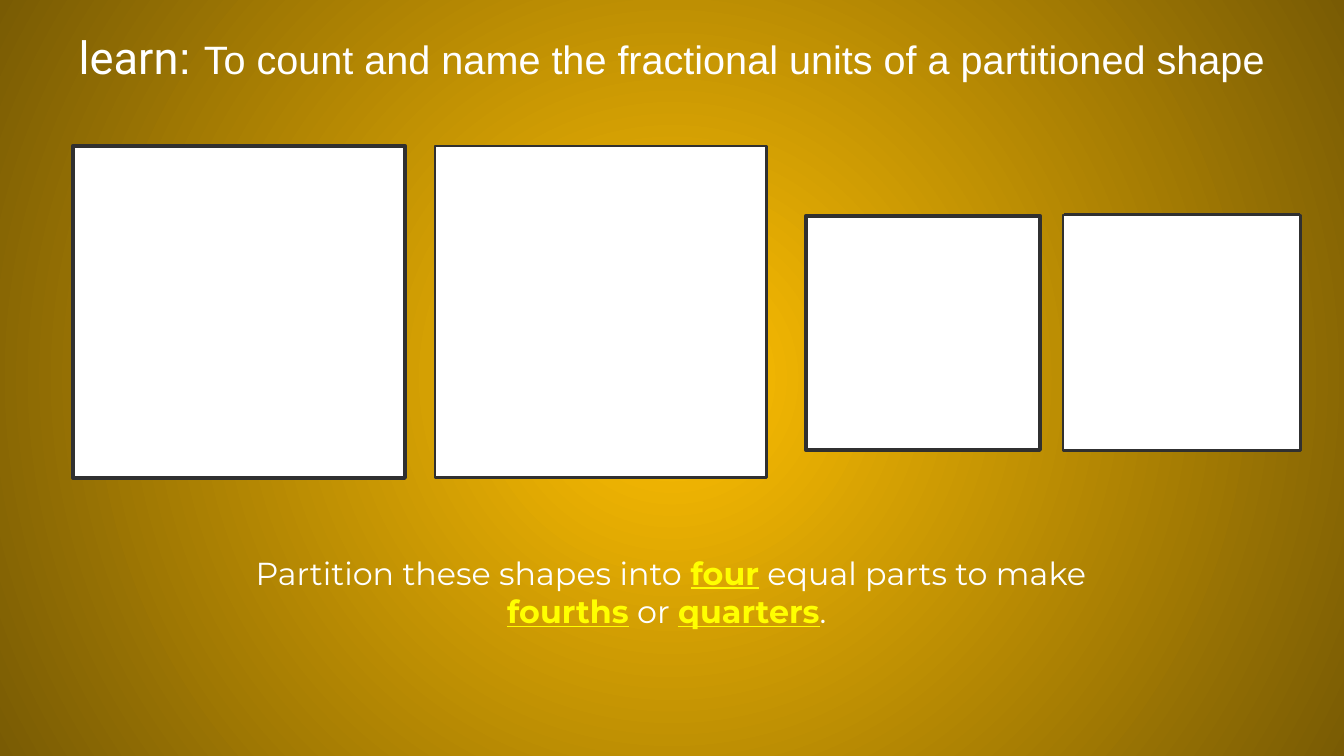
import pptx
import pptx.dml.color
import pptx.enum.shapes
import pptx.enum.text
import pptx.oxml
import pptx.oxml.ns
import pptx.util

SCALE = 914400 / 134.4  # EMU in one px
COLORS = {"white": "FFFFFF", "ink": "303030", "key": "FFFF00",
          "glow": "FFC002", "edge": "795B04"}


def px(n):
    return pptx.util.Emu(round(n * SCALE))


def rgb(name):
    return pptx.dml.color.RGBColor.from_string(COLORS[name])


class Deck:
    def __init__(self, width, height):
        self.prs = pptx.Presentation()
        self.prs.slide_width, self.prs.slide_height = px(width), px(height)
        self.s = self.prs.slides.add_slide(self.prs.slide_layouts[6])

    def radial_background(self, inner, outer):
        fill = self.s.background.fill
        fill.gradient()
        for stop, name, pos in zip(fill.gradient_stops, (inner, outer), (0, 1)):
            stop.color.rgb = rgb(name)
            stop.position = pos
        lin = self.s.background._cSld.find(".//" + pptx.oxml.ns.qn("a:lin"))
        lin.getparent().replace(lin, pptx.oxml.parse_xml(
            f'<a:path {pptx.oxml.ns.nsdecls("a")} path="circle">'
            '<a:fillToRect l="50000" t="50000" r="50000" b="50000"/></a:path>'))

    def square(self, x, y, w, h, weight):
        sp = self.s.shapes.add_shape(
            pptx.enum.shapes.MSO_SHAPE.RECTANGLE, px(x), px(y), px(w), px(h))
        sp.shadow.inherit = False
        sp.fill.solid()
        sp.fill.fore_color.rgb = rgb("white")
        self.stroke(sp, weight)
        return sp

    def line(self, x1, y1, x2, y2, weight):
        sp = self.s.shapes.add_connector(
            pptx.enum.shapes.MSO_CONNECTOR.STRAIGHT, px(x1), px(y1), px(x2), px(y2))
        sp._element.spPr.append(pptx.oxml.parse_xml(
            f'<a:effectLst {pptx.oxml.ns.nsdecls("a")}/>'))
        self.stroke(sp, weight)

    def stroke(self, sp, weight):
        sp.line.color.rgb = rgb("ink")
        sp.line.width = pptx.util.Pt(weight)

    def text(self, x, y, w, h, runs, anchor):
        """Each run is (text, font, size, is_key_word)."""
        tf = self.s.shapes.add_textbox(px(x), px(y), px(w), px(h)).text_frame
        tf.word_wrap = True
        tf.vertical_anchor = anchor
        tf.margin_left = tf.margin_right = pptx.util.Inches(0.1)
        tf.margin_top = tf.margin_bottom = pptx.util.Inches(0.1)
        p = tf.paragraphs[0]
        p.alignment = pptx.enum.text.PP_ALIGN.CENTER
        for text, font, size, key in runs:
            r = p.add_run()
            r.text = text
            r.font.name, r.font.size = font, pptx.util.Pt(size)
            r.font.bold = r.font.underline = key
            r.font.color.rgb = rgb("key" if key else "white")


def main():
    deck = Deck(1344, 756)
    deck.radial_background("glow", "edge")

    # Large squares
    deck.square(73, 146, 332, 332, 2.25)
    deck.square(435, 146, 332, 332, 1.5)

    # Small square with doubled sides
    deck.square(806, 216, 234, 234, 2.25)
    for x in (806, 1040):
        deck.line(x, 216, x, 450, 2.25)

    # Small square with doubled top and bottom
    deck.square(1063, 215, 238, 236, 1.5)
    for y in (214, 450):
        deck.line(1064, y, 1300, y, 0.75)

    # Learning goal
    anchor = pptx.enum.text.MSO_ANCHOR
    deck.text(46, 11, 1253, 90, [
        ("learn", "Roboto", 24.2, False),
        (": ", "Arial", 24.2, False),
        ("To count and name the fractional units of a partitioned shape",
         "Arial", 21.2, False)], anchor.MIDDLE)

    # Task: every second piece is a key word
    pieces = ["Partition these shapes into ", "four", " equal parts to make ",
              "fourths", " or ", "quarters", ". "]
    deck.text(227, 540, 888, 104,
              [(t, "Montserrat", 17, i % 2 == 1) for i, t in enumerate(pieces)],
              anchor.TOP)

    deck.prs.save("out.pptx")


if __name__ == "__main__":
    main()
